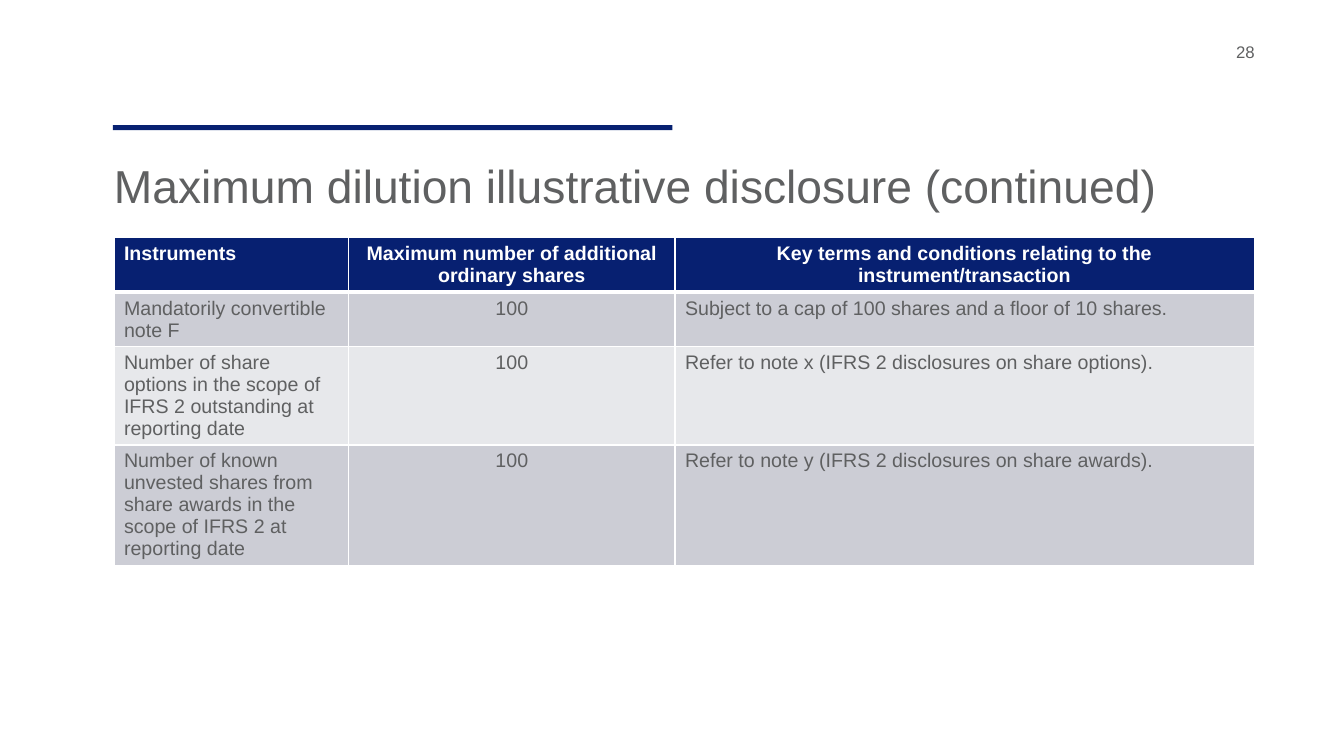
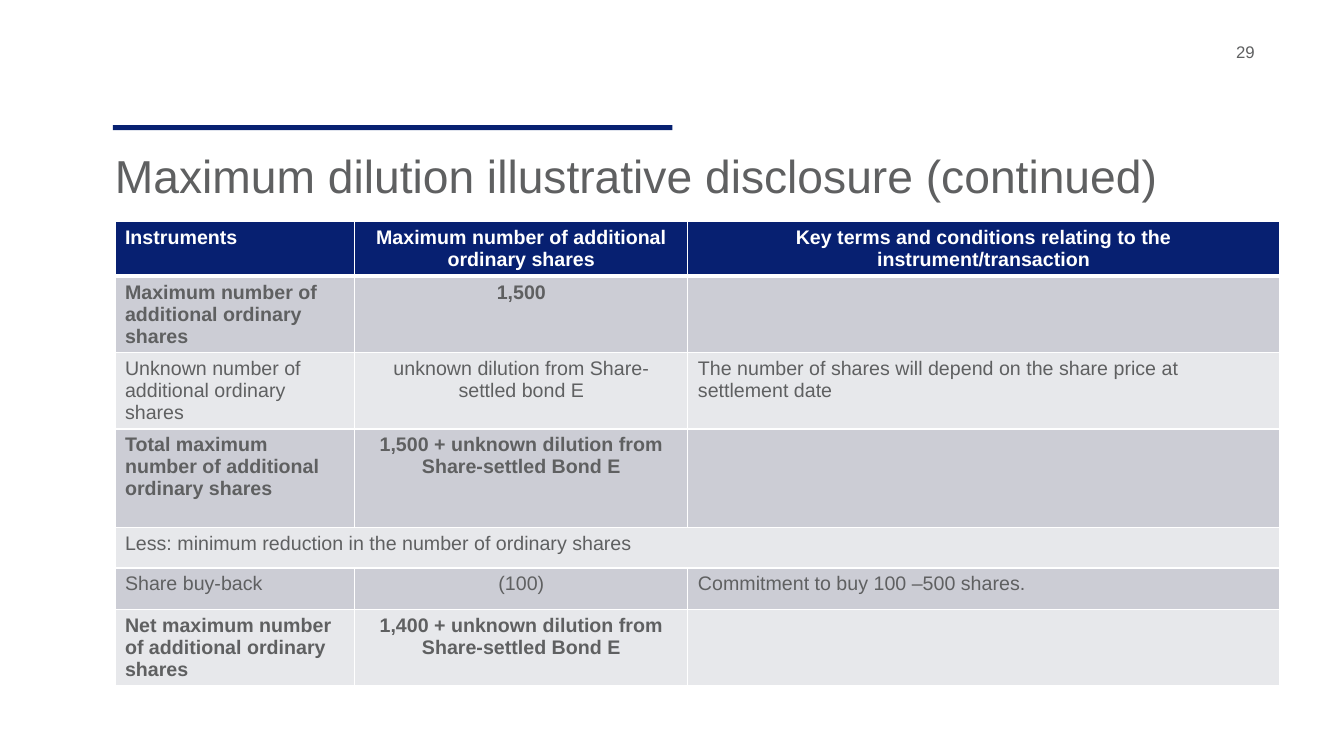
from dataclasses import dataclass

from lxml import etree
from pptx import Presentation
from pptx.dml.color import RGBColor
from pptx.enum.shapes import MSO_SHAPE
from pptx.enum.text import MSO_ANCHOR, MSO_AUTO_SIZE, PP_ALIGN
from pptx.oxml.ns import qn
from pptx.util import Inches, Pt

RECTANGLE = MSO_SHAPE.RECTANGLE
TOP = MSO_ANCHOR.TOP
NO_FIT = MSO_AUTO_SIZE.NONE
LEFT, CENTER = PP_ALIGN.LEFT, PP_ALIGN.CENTER
TITLE_ONLY = 5


@dataclass(frozen=True)
class Theme:
    font: str = "Arial"
    navy: str = "072171"
    header: str = "072071"
    text: str = "5F6061"
    white: str = "FFFFFF"
    bands: tuple = ("CCCDD5", "E7E8EB")
    title_size: int = 33
    table_size: int = 14
    number_size: int = 12
    line: int = 1
    header_line: int = 3


THEME = Theme()
SLIDE_SIZE = (13.33, 7.5)
ACCENT_BAR = (1.12, 1.24, 5.55, 0.05)
PAGE_NUMBER = (12.26, 0.41, 0.67, 0.29)
COLUMN_SHARES = (0.206, 0.286, 0.508)
COLUMN_ALIGNS = (LEFT, CENTER, LEFT)

TITLE = "Maximum dilution illustrative disclosure (continued)"
HEADINGS = ("Instruments", "Maximum number of additional ordinary shares",
            "Key terms and conditions relating to the instrument/transaction")

# Each row: height, bold, cell texts; a single text spans the whole row
INSTRUMENT_ROWS = [
    (0.54, False, ("Mandatorily convertible note F", "100",
                   "Subject to a cap of 100 shares and a floor of 10 shares.")),
    (0.97, False, ("Number of share options in the scope of IFRS 2 outstanding at reporting date",
                   "100", "Refer to note x (IFRS 2 disclosures on share options).")),
    (1.19, False, ("Number of known unvested shares from share awards in the scope of IFRS 2 "
                   "at reporting date",
                   "100", "Refer to note y (IFRS 2 disclosures on share awards).")),
]
TOTAL_ROWS = [
    (0.75, True, ("Maximum number of additional ordinary shares", "1,500", "")),
    (0.76, False, ("Unknown number of additional ordinary shares",
                   "unknown dilution from Share-settled bond E",
                   "The number of shares will depend on the share price at settlement date")),
    (0.98, True, ("Total maximum number of additional ordinary shares",
                  "1,500 + unknown dilution from Share-settled Bond E", "")),
    (0.4, False, ("Less: minimum reduction in the number of ordinary shares",)),
    (0.41, False, ("Share buy-back", "(100)", "Commitment to buy 100 –500 shares.")),
    (0.76, True, ("Net maximum number of additional ordinary shares",
                  "1,400 + unknown dilution from Share-settled Bond E", "")),
]
HEADER_HEIGHT = 0.54

# Page number, title box, table position and width, table rows
PAGES = [
    (28, (1.13, 1.56, 10.58, 0.6), (1.13, 2.36, 11.31), INSTRUMENT_ROWS),
    (29, (1.14, 1.46, 11.12, 0.6), (1.14, 2.2, 11.55), TOTAL_ROWS),
]


def inches(box):
    return [Inches(length) for length in box]


def write(frame, text, size, color, bold=False, align=LEFT):
    frame.text = text
    paragraph = frame.paragraphs[0]
    paragraph.alignment = align
    font = paragraph.font
    for run in paragraph.runs:
        font = run.font
    font.name, font.size, font.bold = THEME.font, Pt(size), bold
    font.color.rgb = RGBColor.from_string(color)


def clear_margins(frame):
    frame.margin_left = frame.margin_right = frame.margin_top = frame.margin_bottom = 0
    frame.vertical_anchor = TOP
    frame.word_wrap = True
    frame.auto_size = NO_FIT


def add_accent_bar(slide, box):
    """Draw the bar and hand it to the layout, so every slide shares it."""
    bar = slide.shapes.add_shape(RECTANGLE, *inches(box))
    bar.shadow.inherit = False
    bar.fill.solid()
    bar.fill.fore_color.rgb = RGBColor.from_string(THEME.navy)
    bar.line.fill.background()
    slide.slide_layout.shapes.element.append(bar.element)


def add_title(slide, box):
    title = slide.shapes.title
    title.left, title.top, title.width, title.height = inches(box)
    clear_margins(title.text_frame)
    write(title.text_frame, TITLE, THEME.title_size, THEME.text)


def add_page_number(slide, box, number):
    frame = slide.shapes.add_textbox(*inches(box)).text_frame
    clear_margins(frame)
    write(frame, str(number), THEME.number_size, THEME.text)


def set_borders(cell, bottom):
    properties = cell._tc.get_or_add_tcPr()
    widths = {"a:lnL": THEME.line, "a:lnR": THEME.line, "a:lnT": THEME.line, "a:lnB": bottom}
    for position, (side, width) in enumerate(widths.items()):
        line = etree.Element(qn(side), w=str(Pt(width)))
        fill = etree.SubElement(line, qn("a:solidFill"))
        etree.SubElement(fill, qn("a:srgbClr"), val=THEME.white)
        properties.insert(position, line)


def add_disclosure_table(slide, place, body_rows):
    left, top, width = place
    rows = [(HEADER_HEIGHT, True, HEADINGS)] + body_rows
    height = sum(row[0] for row in rows)
    table = slide.shapes.add_table(len(rows), len(COLUMN_SHARES),
                                   *inches((left, top, width, height))).table
    for column, share in zip(table.columns, COLUMN_SHARES):
        column.width = Inches(width * share)

    for index, (row_height, bold, texts) in enumerate(rows):
        table.rows[index].height = Inches(row_height)
        is_header = index == 0
        fill = THEME.header if is_header else THEME.bands[(index - 1) % 2]
        color = THEME.white if is_header else THEME.text
        for column, align in enumerate(COLUMN_ALIGNS):
            cell = table.cell(index, column)
            cell.fill.solid()
            cell.fill.fore_color.rgb = RGBColor.from_string(fill)
            set_borders(cell, THEME.header_line if is_header else THEME.line)
            if column < len(texts):
                write(cell.text_frame, texts[column], THEME.table_size, color, bold,
                      CENTER if is_header and column else align)
        if len(texts) == 1:
            table.cell(index, 0).merge(table.cell(index, len(COLUMN_SHARES) - 1))


def main():
    deck = Presentation()
    deck.slide_width, deck.slide_height = inches(SLIDE_SIZE)
    layout = deck.slide_layouts[TITLE_ONLY]
    for index, (number, title_box, table_place, rows) in enumerate(PAGES):
        slide = deck.slides.add_slide(layout)
        if index == 0:
            add_accent_bar(slide, ACCENT_BAR)
        add_title(slide, title_box)
        add_disclosure_table(slide, table_place, rows)
        add_page_number(slide, PAGE_NUMBER, number)
    deck.save("out.pptx")


if __name__ == "__main__":
    main()
